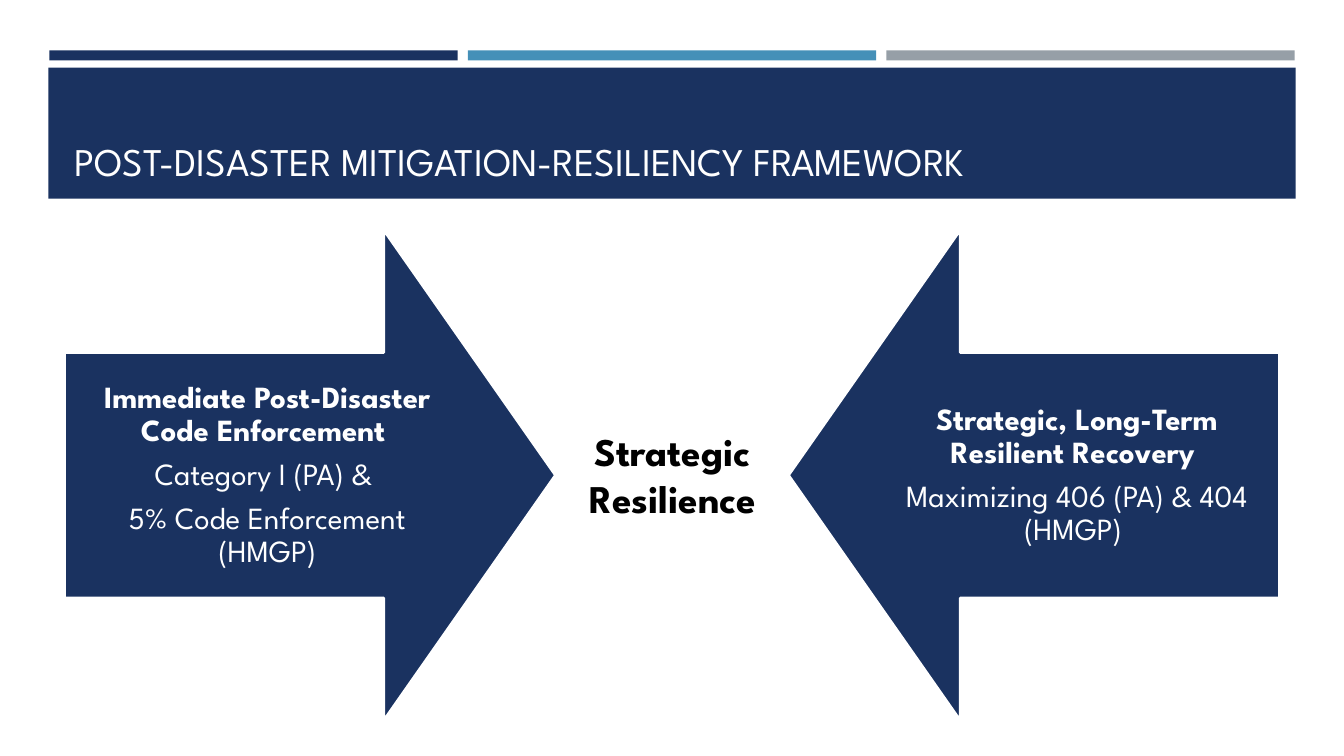
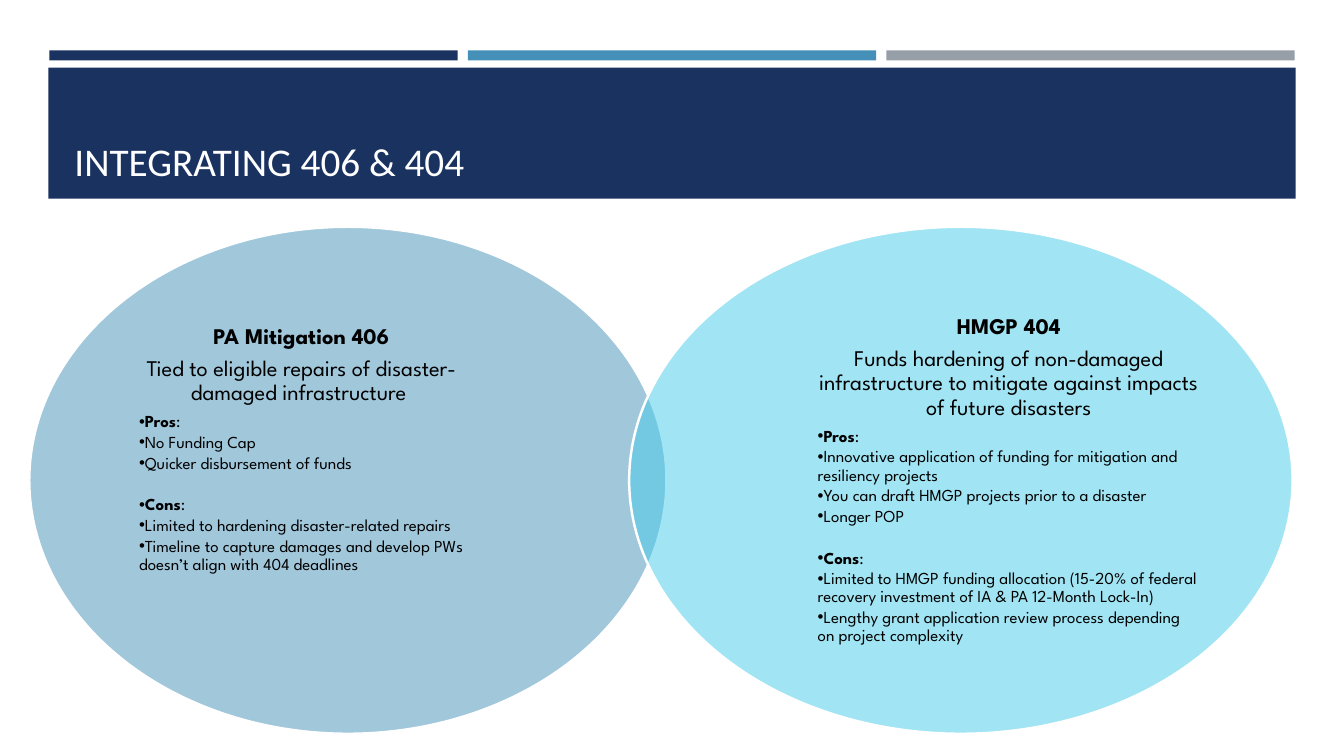
from dataclasses import dataclass

from lxml.etree import SubElement
from pptx import Presentation
from pptx.dml.color import RGBColor
from pptx.enum.shapes import MSO_SHAPE as Preset
from pptx.enum.text import MSO_ANCHOR as Anchor, PP_ALIGN as Align
from pptx.oxml.ns import qn
from pptx.util import Inches, Pt

NAVY = RGBColor(0x1A, 0x32, 0x60)
BLUE = RGBColor(0x45, 0x90, 0xB8)
GRAY = RGBColor(0x96, 0x9F, 0xA7)
CYAN = RGBColor(0x45, 0xCB, 0xE8)
WHITE = RGBColor(0xFF, 0xFF, 0xFF)
BLACK = RGBColor(0x00, 0x00, 0x00)
FONT = "League Spartan"
BULLET_FONT = "Arial"
LINE_SPACING = 0.9


@dataclass(frozen=True)
class Box:
    left: float
    top: float
    width: float
    height: float

    def lengths(self) -> list:
        return [Inches(n) for n in (self.left, self.top, self.width, self.height)]


@dataclass(frozen=True)
class Line:
    text: str
    size: float
    bold: bool = False
    suffix: str = ""
    level: int = 0
    before: float = 0
    after: float = 0


@dataclass(frozen=True)
class Arrow:
    preset: Preset
    box: Box
    text_box: Box
    lines: list[Line]


@dataclass(frozen=True)
class Circle:
    color: RGBColor
    box: Box
    text_box: Box
    bullet_margin: float
    lines: list[Line]


def main_line(text: str, size: float, bold: bool = False) -> Line:
    return Line(text, size, bold, after=0.35 * size)


def bullet(text: str) -> Line:
    return Line(text, 12, level=2, after=1.8)


def heading(text: str, before: float = 0) -> Line:
    return Line(text, 12, True, ":", 1, before, 1.8)


ARROWS = [
    Arrow(Preset.RIGHT_ARROW, Box(0.64, 2.28, 4.87, 4.87), Box(0.64, 3.5, 4.02, 2.44), [
        main_line("Immediate Post-Disaster Code Enforcement ", 22, True),
        main_line("Category I (PA) & ", 22),
        main_line("5% Code Enforcement (HMGP)", 22),
    ]),
    Arrow(Preset.LEFT_ARROW, Box(7.82, 2.28, 4.87, 4.87), Box(8.67, 3.5, 4.02, 2.44), [
        main_line("Strategic, Long-Term Resilient Recovery ", 22, True),
        main_line("Maximizing 406 (PA) & 404 (HMGP) ", 22),
    ]),
]

CIRCLES = [
    Circle(BLUE, Box(0.29, 2.25, 6.32, 5.03), Box(1.17, 2.84, 3.64, 3.24), 0.21, [
        main_line("PA Mitigation 406", 16, True),
        main_line("Tied to eligible repairs of disaster-damaged infrastructure ", 16),
        heading("Pros"),
        bullet("No Funding Cap"),
        bullet("Quicker disbursement of funds"),
        heading("Cons", before=15),
        bullet("Limited to hardening disaster-related repairs"),
        bullet("Timeline to capture damages and develop PWs doesn’t align with 404 deadlines"),
    ]),
    Circle(CYAN, Box(6.24, 2.25, 6.58, 5.03), Box(8.11, 2.84, 3.79, 3.85), 0, [
        main_line("HMGP 404", 16, True),
        main_line("Funds hardening of non-damaged infrastructure to mitigate against "
                  "impacts of future disasters", 16),
        heading("Pros"),
        bullet("Innovative application of funding for mitigation and resiliency projects"),
        bullet("You can draft HMGP projects prior to a disaster"),
        bullet("Longer POP"),
        heading("Cons", before=15),
        bullet("Limited to HMGP funding allocation (15-20% of federal recovery "
               "investment of IA & PA 12-Month Lock-In)"),
        bullet("Lengthy grant application review process depending on project complexity"),
    ]),
]


def add_filled_shape(slide, preset: Preset, box: Box, color: RGBColor,
                     outline: float = 0, opacity: int = 100):
    shape = slide.shapes.add_shape(preset, *box.lengths())
    shape.shadow.inherit = False
    shape.fill.solid()
    shape.fill.fore_color.rgb = color
    if opacity < 100:
        color_element = shape.fill._xPr.find(qn("a:solidFill"))[0]
        SubElement(color_element, qn("a:alpha")).set("val", str(opacity * 1000))
    if outline:
        shape.line.color.rgb = WHITE
        shape.line.width = Pt(outline)
    else:
        shape.line.fill.background()
    return shape


def add_bullet(paragraph, level: int, margin: float) -> None:
    paragraph.level = level
    properties = paragraph._p.get_or_add_pPr()
    properties.set("marL", str(Inches(margin)))
    properties.set("indent", "0")
    SubElement(properties, qn("a:buFont")).set("typeface", BULLET_FONT)
    SubElement(properties, qn("a:buChar")).set("char", "•")


def add_text(slide, box: Box, lines: list[Line], *, color: RGBColor = BLACK,
             font: str = FONT, align: Align = Align.CENTER,
             anchor: Anchor = Anchor.MIDDLE, insets: tuple[float, float] = (0, 0),
             spacing: float = LINE_SPACING, bullet_margin: float = 0) -> None:
    frame = slide.shapes.add_textbox(*box.lengths()).text_frame
    frame.word_wrap = True
    frame.vertical_anchor = anchor
    frame.margin_left = frame.margin_right = Inches(insets[0])
    frame.margin_top = frame.margin_bottom = Inches(insets[1])
    for index, line in enumerate(lines):
        paragraph = frame.add_paragraph() if index else frame.paragraphs[0]
        if line.level:
            add_bullet(paragraph, line.level, bullet_margin)
        paragraph.alignment = Align.LEFT if line.level else align
        paragraph.line_spacing = spacing
        paragraph.space_before = Pt(line.before)
        paragraph.space_after = Pt(line.after)
        for text, bold in ((line.text, line.bold), (line.suffix, False)):
            if text:
                run = paragraph.add_run()
                run.text = text
                run.font.name = font
                run.font.size = Pt(line.size)
                run.font.bold = bold
                run.font.color.rgb = color


def add_titled_slide(presentation, title: str, font: str = FONT):
    slide = presentation.slides.add_slide(presentation.slide_layouts[6])
    for index, color in enumerate((NAVY, BLUE, GRAY)):
        add_filled_shape(slide, Preset.RECTANGLE, Box(0.49 + 4.15 * index, 0.5, 4.05, 0.1), color)
    add_filled_shape(slide, Preset.RECTANGLE, Box(0.48, 0.67, 12.37, 1.3), NAVY)
    add_text(slide, Box(0.64, 0.77, 12.06, 1.11), [Line(title, 28)], color=WHITE, font=font,
             align=Align.LEFT, anchor=Anchor.BOTTOM, insets=(0.1, 0.05), spacing=1)
    return slide


def add_framework_slide(presentation) -> None:
    slide = add_titled_slide(presentation, "POST-DISASTER MITIGATION-RESILIENCY FRAMEWORK")
    for arrow in ARROWS:
        shape = add_filled_shape(slide, arrow.preset, arrow.box, NAVY, outline=2)
        shape.adjustments[0] = 0.5
        shape.adjustments[1] = 0.35
        add_text(slide, arrow.text_box, arrow.lines, color=WHITE, insets=(0.17, 0.17))
    add_text(slide, Box(5.43, 4.19, 2.48, 1.04), [Line("Strategic Resilience", 28, True)],
             anchor=Anchor.TOP, insets=(0.1, 0.05), spacing=1)


def add_integration_slide(presentation) -> None:
    slide = add_titled_slide(presentation, "INTEGRATING 406 & 404", font="Calibri")
    for circle in CIRCLES:
        add_filled_shape(slide, Preset.OVAL, circle.box, circle.color, outline=1.75, opacity=50)
        add_text(slide, circle.text_box, circle.lines, bullet_margin=circle.bullet_margin)


def main() -> None:
    presentation = Presentation()
    presentation.slide_width = Inches(13.33)
    presentation.slide_height = Inches(7.5)
    add_framework_slide(presentation)
    add_integration_slide(presentation)
    presentation.save("out.pptx")


if __name__ == "__main__":
    main()
